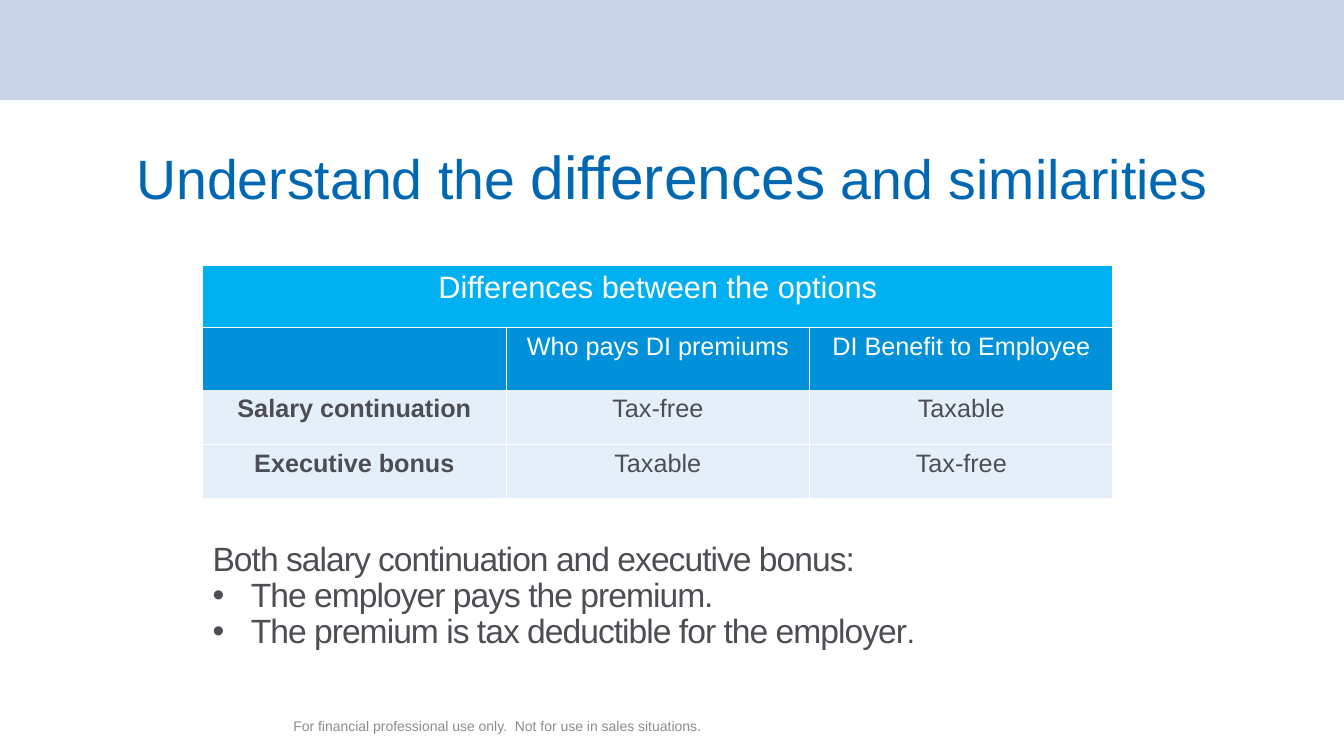
from lxml.etree import SubElement
from pptx import Presentation
from pptx.dml.color import RGBColor
from pptx.enum.shapes import MSO_SHAPE
from pptx.enum.text import MSO_ANCHOR, MSO_AUTO_SIZE, PP_ALIGN
from pptx.oxml.ns import qn
from pptx.util import Inches, Pt

WHITE = RGBColor(0xFF, 0xFF, 0xFF)
BAND = RGBColor(0xC8, 0xD3, 0xE6)
TITLE_BLUE = RGBColor(0x00, 0x68, 0xB3)
SKY = RGBColor(0x00, 0xB0, 0xF0)
BLUE = RGBColor(0x00, 0x91, 0xDA)
PALE = RGBColor(0xE4, 0xEF, 0xF9)
DARK = RGBColor(0x4D, 0x4E, 0x53)
GREY = RGBColor(0x8C, 0x8C, 0x8C)

ROWS = [
    ["Differences between the options", "", ""],
    ["", "Who pays DI premiums", "DI Benefit to Employee"],
    ["Salary continuation", "Tax-free", "Taxable"],
    ["Executive bonus", "Taxable", "Tax-free"],
]
ROW_HEIGHTS = [0.62, 0.62, 0.54, 0.54]
ROW_STYLES = [(SKY, WHITE, 22), (BLUE, WHITE, 18), (PALE, DARK, 18), (PALE, DARK, 18)]


def add_run(p, text, size, color, bold=False):
    r = p.add_run()
    r.text = text
    for name, value in {"name": "Arial", "size": Pt(size), "bold": bold}.items():
        setattr(r.font, name, value)
    r.font.color.rgb = color
    return r


def add_text_box(slide, x, y, w, h):
    tf = slide.shapes.add_textbox(Inches(x), Inches(y), Inches(w), Inches(h)).text_frame
    tf.word_wrap = True
    return tf


def add_band(slide, x, y, w, h):
    sp = slide.shapes.add_shape(MSO_SHAPE.RECTANGLE, Inches(x), Inches(y), Inches(w), Inches(h))
    sp.shadow.inherit = False
    sp.fill.solid()
    sp.fill.fore_color.rgb = BAND
    sp.line.fill.background()


def add_title(slide, x, y, w, h):
    title = slide.shapes.title
    for name, value in {"left": x, "top": y, "width": w, "height": h}.items():
        setattr(title, name, Inches(value))
    tf = title.text_frame
    tf.auto_size = MSO_AUTO_SIZE.NONE
    tf.vertical_anchor = MSO_ANCHOR.MIDDLE
    p = tf.paragraphs[0]
    p.alignment = PP_ALIGN.CENTER
    p.line_spacing = 0.9
    for text, size in [("Understand the ", 39.6), ("differences", 43.2), (" and similarities", 39.6)]:
        add_run(p, text, size, TITLE_BLUE)


def set_borders(cell, hidden):
    """Draw thin white borders, leaving out the side named in hidden."""
    tcPr = cell._tc.get_or_add_tcPr()
    for i, side in enumerate(["lnL", "lnR", "lnT", "lnB"]):
        ln = tcPr.makeelement(qn(f"a:{side}"), {"w": str(Pt(1))})
        tcPr.insert(i, ln)
        if side == hidden:
            SubElement(ln, qn("a:noFill"))
        else:
            fill = SubElement(ln, qn("a:solidFill"))
            SubElement(fill, qn("a:srgbClr"), val=str(WHITE))


def add_options_table(slide, x, y, w):
    frame = slide.shapes.add_table(len(ROWS), 3, Inches(x), Inches(y),
                                   Inches(w), Inches(sum(ROW_HEIGHTS)))
    table = frame.table
    table.first_row = table.horz_banding = False
    for column in table.columns:
        column.width = Inches(w / 3)
    table.cell(0, 0).merge(table.cell(0, 2))
    for i, (texts, height, style) in enumerate(zip(ROWS, ROW_HEIGHTS, ROW_STYLES)):
        fill, color, size = style
        table.rows[i].height = Inches(height)
        for j, text in enumerate(texts):
            cell = table.cell(i, j)
            cell.fill.solid()
            cell.fill.fore_color.rgb = fill
            set_borders(cell, {1: "lnB", 2: "lnT"}.get(i))
            if text:
                p = cell.text_frame.paragraphs[0]
                p.alignment = PP_ALIGN.CENTER
                add_run(p, text, size, color, bold=i > 1 and j == 0)


def add_similarities(slide, x, y, w, h):
    tf = add_text_box(slide, x, y, w, h)
    lines = [
        [("Both salary continuation and executive bonus:", 24)],
        [("The employer pays the premium.", 24)],
        [("The premium is tax deductible for the employer", 24), (".", 22)],
    ]
    for i, runs in enumerate(lines):
        p = tf.add_paragraph() if i else tf.paragraphs[0]
        p.line_spacing = 0.9
        if i:
            pPr = p._p.get_or_add_pPr()
            pPr.set("marL", str(Inches(0.38)))
            pPr.set("indent", str(-Inches(0.38)))
            SubElement(pPr, qn("a:buFont"), typeface="Arial")
            SubElement(pPr, qn("a:buChar"), char="•")
        for text, size in runs:
            r = add_run(p, text, size, DARK)
            r._r.get_or_add_rPr().set("spc", "-70")


def add_disclaimer(slide, x, y, w, h):
    tf = add_text_box(slide, x, y, w, h)
    tf.vertical_anchor = MSO_ANCHOR.MIDDLE
    p = tf.paragraphs[0]
    p.alignment = PP_ALIGN.CENTER
    add_run(p, "For financial professional use only.  Not for use in sales situations.", 10, GREY)


def main():
    prs = Presentation()
    prs.slide_width, prs.slide_height = Inches(13.33), Inches(7.5)
    slide = prs.slides.add_slide(prs.slide_layouts[5])
    add_band(slide, 0, 0, 13.33, 0.99)
    add_title(slide, 0.4, 1.49, 12.53, 0.58)
    add_disclaimer(slide, 2.01, 7.05, 5.84, 0.3)
    add_options_table(slide, 2.01, 2.63, 9.03)
    add_similarities(slide, 2.01, 5.33, 8.76, 1.31)
    prs.save("out.pptx")


if __name__ == "__main__":
    main()
